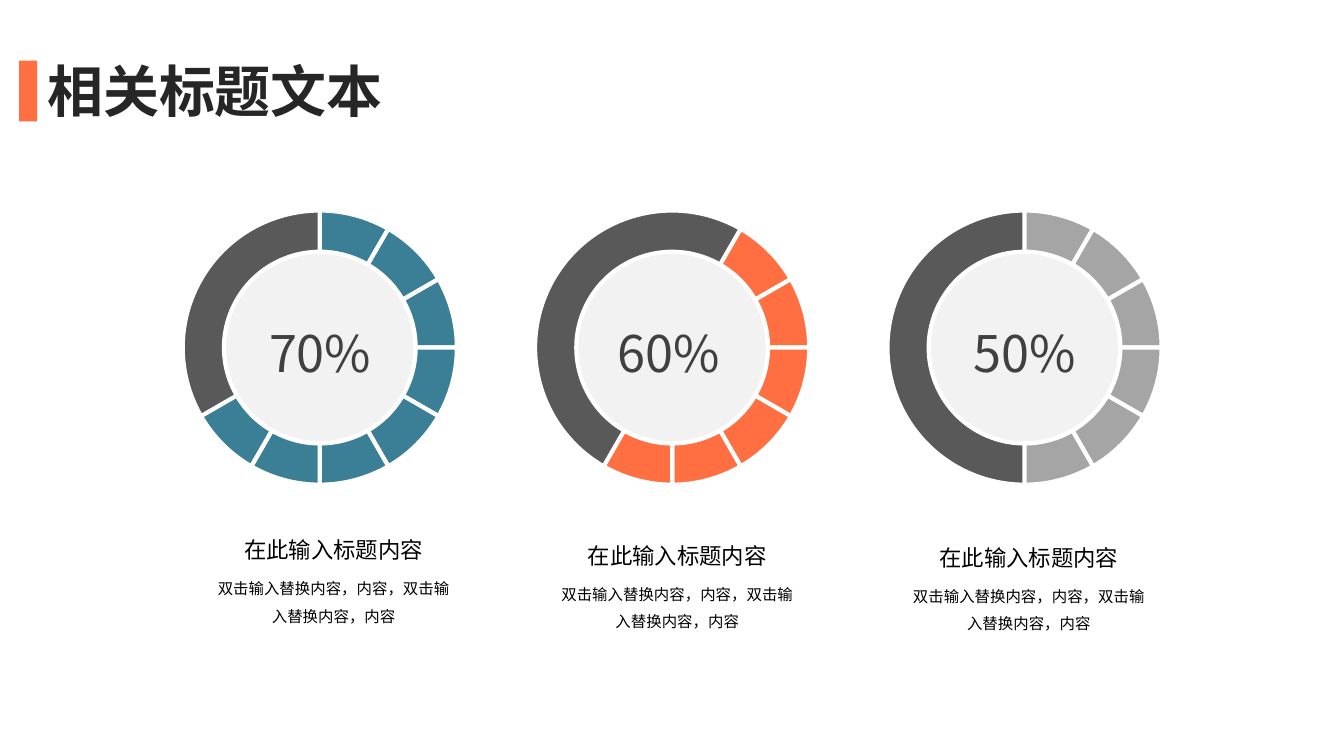
from lxml.etree import SubElement
from pptx import Presentation
from pptx.dml.color import RGBColor
from pptx.enum.shapes import MSO_SHAPE
from pptx.enum.text import MSO_AUTO_SIZE, PP_ALIGN
from pptx.oxml.ns import qn
from pptx.util import Cm, Pt

TITLE = "相关标题文本"
HEADING = "在此输入标题内容"
BODY = "双击输入替换内容，内容，双击输入替换内容，内容"
FONT = "Noto Sans CJK SC"
COLORS = {
    "teal": "3B7F96", "orange": "FF6F41", "gray": "A5A5A5",
    "ring": "595959", "hub": "F2F2F2", "white": "FFFFFF",
    "title": "262626", "percent": "404040", "black": "000000",
}
# Angles are in degrees clockwise from three o'clock; x centres and tops in cm.
GAUGES = [
    {"percent": "70%", "color": "teal", "start": 270, "segments": 8,
     "percent_x": 8.07, "caption_x": 8.41, "caption_top": 13.26},
    {"percent": "60%", "color": "orange", "start": 300, "segments": 6,
     "percent_x": 16.85, "caption_x": 17.07, "caption_top": 13.41},
    {"percent": "50%", "color": "gray", "start": 270, "segments": 6,
     "percent_x": 25.82, "caption_x": 25.93, "caption_top": 13.46},
]
FIRST_X, STEP_X, CENTER_Y = 8.06, 8.88, 8.76
RING_D, HUB_D = 6.91, 4.83
SEGMENT_ANGLE = 30


def color(name):
    return RGBColor.from_string(COLORS[name])


def add_filled(slide, kind, x, y, w, h, fill, outlined=True):
    sp = slide.shapes.add_shape(kind, Cm(x), Cm(y), Cm(w), Cm(h))
    sp.shadow.inherit = False
    sp.fill.solid()
    sp.fill.fore_color.rgb = color(fill)
    if outlined:
        sp.line.color.rgb = color("white")
        sp.line.width = Pt(3)
    else:
        sp.line.fill.background()
    return sp


def add_round(slide, kind, x, diameter, fill):
    """Add a square-framed shape centred on the gauge at x."""
    r = diameter / 2
    return add_filled(slide, kind, x - r, CENTER_Y - r, diameter, diameter, fill)


def add_text(slide, text, x, y, w, h, size, fill, align=PP_ALIGN.CENTER,
             spacing=None, bold=False, wrap=True):
    tf = slide.shapes.add_textbox(Cm(x), Cm(y), Cm(w), Cm(h)).text_frame
    tf.word_wrap = wrap
    tf.auto_size = MSO_AUTO_SIZE.SHAPE_TO_FIT_TEXT
    p = tf.paragraphs[0]
    p.text = text
    p.alignment = align
    p.line_spacing = spacing
    font = p.runs[0].font
    font.size = Pt(size)
    font.bold = bold
    font.color.rgb = color(fill)
    font.name = FONT
    SubElement(p.runs[0]._r.get_or_add_rPr(), qn("a:ea"), typeface=FONT)


def add_gauge(slide, x, gauge):
    add_round(slide, MSO_SHAPE.OVAL, x, RING_D, "ring")
    add_round(slide, MSO_SHAPE.OVAL, x, HUB_D, "hub")
    for i in range(gauge["segments"]):
        start = (gauge["start"] + i * SEGMENT_ANGLE) % 360
        end = (start + SEGMENT_ANGLE) % 360
        arc = add_round(slide, MSO_SHAPE.BLOCK_ARC, x, RING_D, gauge["color"])
        # Angle adjustments count 60000 units per degree, scaled by 100000.
        arc.adjustments[0] = start * 0.6
        arc.adjustments[1] = end * 0.6
        arc.adjustments[2] = (RING_D - HUB_D) / 2 / RING_D
    add_text(slide, gauge["percent"], gauge["percent_x"] - 2.96, 7.98,
             5.92, 1.8, 36, "percent")


def add_caption(slide, x, top):
    add_text(slide, HEADING, x - 2.54, top, 5.08, 1.02, 16, "black",
             spacing=1.2, wrap=False)
    add_text(slide, BODY, x - 3.3, top + 0.97, 6.6, 1.57, 11, "black",
             spacing=1.5)


def main():
    prs = Presentation()
    prs.slide_width, prs.slide_height = Cm(33.87), Cm(19.05)
    slide = prs.slides.add_slide(prs.slide_layouts[6])
    for i, gauge in enumerate(GAUGES):
        add_gauge(slide, FIRST_X + i * STEP_X, gauge)
        add_caption(slide, gauge["caption_x"], gauge["caption_top"])
    add_text(slide, TITLE, 0.94, 1.3, 17.91, 1.96, 40, "title",
             align=PP_ALIGN.LEFT, bold=True)
    add_filled(slide, MSO_SHAPE.RECTANGLE, 0.48, 1.53, 0.46, 1.53, "orange",
               outlined=False)
    prs.save("out.pptx")


if __name__ == "__main__":
    main()
